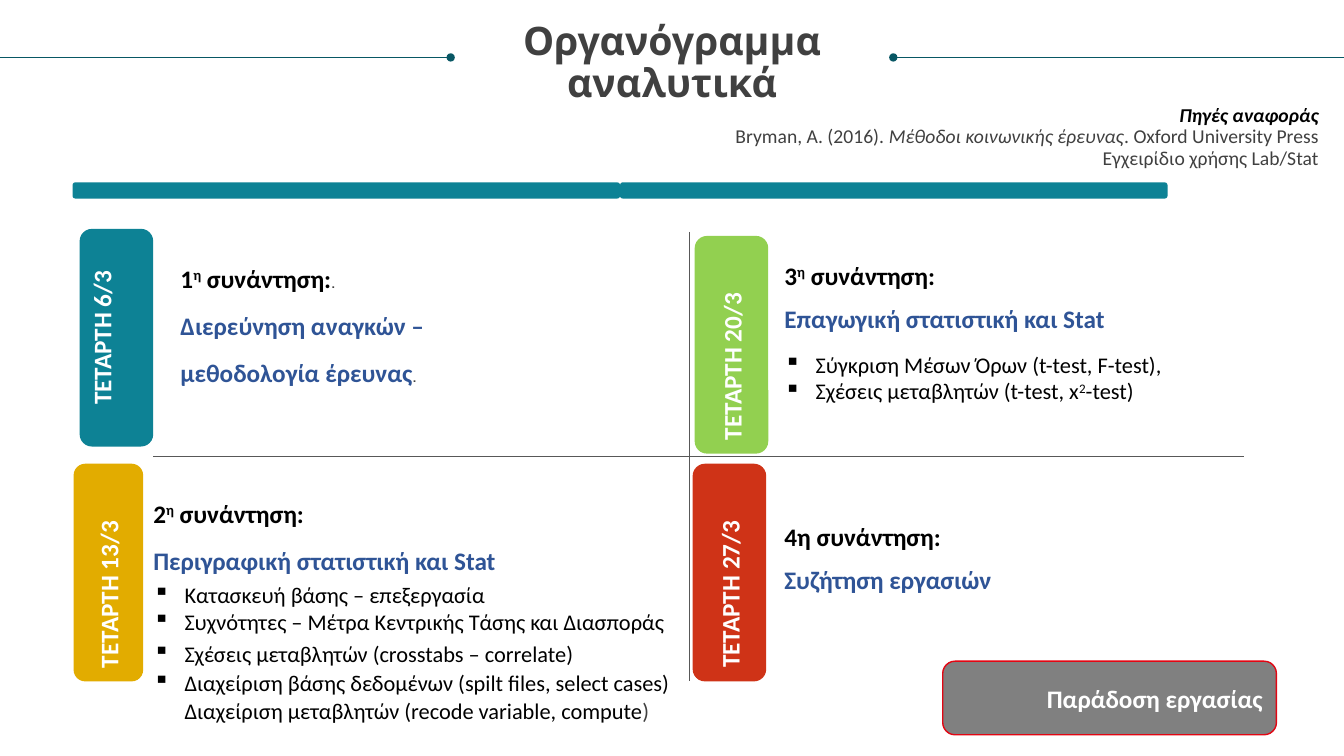
from dataclasses import dataclass

from lxml import etree
from pptx import Presentation
from pptx import util as u
from pptx.dml.color import RGBColor
from pptx.enum import shapes, text
from pptx.oxml.ns import qn


@dataclass(frozen=True)
class Theme:
    teal: str = "0D8295"
    deep_teal: str = "085764"
    amber: str = "E2AC00"
    green: str = "92D050"
    red: str = "CF3317"
    grey: str = "808080"
    outline: str = "E20613"
    rule: str = "585858"
    ink: str = "404040"
    black: str = "000000"
    white: str = "FFFFFF"
    blue: str = "2F5496"
    body: str = "Calibri"
    display: str = "League Spartan"
    accent: str = "Cabin"
    title_size: int = 28
    heading_size: int = 18
    item_size: int = 16
    source_size: int = 14


THEME = Theme()
ALIGN = text.PP_ALIGN
HEADING = dict(size=THEME.heading_size, bold=True)
TOPIC = dict(HEADING, color=THEME.blue)
ITEM = dict(size=THEME.item_size)
DOT = (".", dict(size=THEME.source_size, font=THEME.accent, color=THEME.ink, bold=False))
LOOSE = dict(line=1.07, after=8)


# Text helpers
def add_run(paragraph, content, *, size, font=THEME.body, color=THEME.black,
            bold=False, italic=False, raised=False):
    for index, piece in enumerate(content.split("\n")):
        if index:
            paragraph.add_line_break()
        run = paragraph.add_run()
        run.text = piece
        run.font.size = u.Pt(size)
        run.font.name = font
        run.font.bold = bold
        run.font.italic = italic
        run.font.color.rgb = RGBColor.from_string(color)
        if raised:
            run.font._element.set("baseline", "30000")


def write(frame, content, *, first=False, style, align=ALIGN.LEFT,
          line=None, before=0, after=0, bullet=False):
    """Content is a string, or a list of strings and (string, changes) pairs."""
    paragraph = frame.paragraphs[0] if first else frame.add_paragraph()
    if bullet:
        properties = paragraph._p.get_or_add_pPr()
        properties.set("marL", str(u.Inches(0.31)))
        properties.set("indent", str(-u.Inches(0.31)))
        etree.SubElement(properties, qn("a:buChar")).set("char", "▪")
    paragraph.alignment = align
    paragraph.space_before = u.Pt(0 if first else before)
    paragraph.space_after = u.Pt(after)
    if line:
        paragraph.line_spacing = line
    for part in [content] if isinstance(content, str) else content:
        words, changes = (part, {}) if isinstance(part, str) else part
        add_run(paragraph, words, **{**style, **changes})


def clear_frame(frame):
    frame.word_wrap = True
    frame.auto_size = text.MSO_AUTO_SIZE.NONE
    frame.vertical_anchor = text.MSO_ANCHOR.TOP
    frame.margin_left = frame.margin_top = frame.margin_right = frame.margin_bottom = 0


# Shape helpers
def add_rule(slide, start, end, color, oval_end=False):
    rule = slide.shapes.add_connector(
        shapes.MSO_CONNECTOR.STRAIGHT, *(u.Inches(value) for value in start + end))
    rule.line.color.rgb = RGBColor.from_string(color)
    rule.line.width = u.Pt(0.5)
    if oval_end:
        etree.SubElement(rule.line._get_or_add_ln(), qn("a:tailEnd")).set("type", "oval")
    etree.SubElement(rule._element.spPr, qn("a:effectLst"))


def add_rounded(slide, left, top, width, height, fill, outline=None):
    shape = slide.shapes.add_shape(
        shapes.MSO_SHAPE.ROUNDED_RECTANGLE,
        *(u.Inches(value) for value in (left, top, width, height)))
    shape.shadow.inherit = False
    shape.fill.solid()
    shape.fill.fore_color.rgb = RGBColor.from_string(fill)
    if outline:
        shape.line.color.rgb = RGBColor.from_string(outline)
        shape.line.width = u.Pt(1)
    else:
        shape.line.fill.background()
    shape.text_frame.vertical_anchor = text.MSO_ANCHOR.MIDDLE
    return shape


# Title with the sources below it, between two dotted rules
def build_header(slide, left, top, width, height):
    rule_top = top + 0.36
    add_rule(slide, (13.33, rule_top), (8.86, rule_top), THEME.deep_teal, oval_end=True)
    add_rule(slide, (0, rule_top), (4.47, rule_top), THEME.deep_teal, oval_end=True)

    title = slide.shapes.title
    title.left, title.top = u.Inches(left), u.Inches(top)
    title.width, title.height = u.Inches(width), u.Inches(height)
    frame = title.text_frame
    clear_frame(frame)
    heading = dict(size=THEME.title_size, font=THEME.display, color=THEME.ink, bold=True)
    write(frame, "Οργανόγραμμα", first=True, style=heading, align=ALIGN.CENTER, line=0.9)
    write(frame, "αναλυτικά", style=heading, align=ALIGN.CENTER, line=0.9)

    source = dict(size=THEME.source_size, color=THEME.ink)
    label = ("Πηγές αναφοράς", dict(color=THEME.black, bold=True, italic=True))
    book = ["Bryman, A. (2016). ", ("Μέθοδοι κοινωνικής έρευνας", dict(italic=True)),
            ". Oxford University Press"]
    for content in ([label], book, "Εγχειρίδιο χρήσης Lab/Stat"):
        write(frame, content, style=source, align=ALIGN.RIGHT, line=0.9)


# Band of two equal bars
def build_band(slide, left, top, width, height):
    for index in range(2):
        add_rounded(slide, left + index * width / 2, top, width / 2, height, THEME.teal)


# Upright date tab, given by the box it fills once turned
def build_tab(slide, left, top, width, height, date, fill,
              align=ALIGN.LEFT, bottom_inset=0.05):
    shift = (height - width) / 2
    tab = add_rounded(slide, left - shift, top + shift, height, width, fill)
    tab.rotation = 270
    tab.text_frame.margin_bottom = u.Inches(bottom_inset)
    write(tab.text_frame, date, first=True, align=align,
          style=dict(HEADING, color=THEME.white))


# Meeting text: rows of (content, style, paragraph format)
def build_meeting(slide, left, top, width, height, rows):
    box = slide.shapes.add_textbox(*(u.Inches(value) for value in (left, top, width, height)))
    clear_frame(box.text_frame)
    for index, (content, style, layout) in enumerate(rows):
        write(box.text_frame, content, first=index == 0, style=style, **layout)


def meeting_name(number):
    return [number, ("η", dict(raised=True)), " συνάντηση:"]


# Deadline button
def build_deadline(slide, left, top, width, height):
    button = add_rounded(slide, left, top, width, height, THEME.grey, THEME.outline)
    write(button.text_frame, "Παράδοση εργασίας", first=True, align=ALIGN.RIGHT,
          style=dict(HEADING, color=THEME.white))


def main():
    presentation = Presentation()
    presentation.slide_width, presentation.slide_height = u.Inches(13.33), u.Inches(7.5)
    slide = presentation.slides.add_slide(presentation.slide_layouts.get_by_name("Title Only"))

    build_header(slide, 0.25, 0.21, 12.83, 2.21)
    build_band(slide, 0.72, 1.81, 10.86, 0.16)

    # Cross between the four meetings
    add_rule(slide, (1.52, 4.53), (12.34, 4.53), THEME.rule)
    add_rule(slide, (6.84, 2.3), (6.84, 6.76), THEME.rule)

    # Date tabs
    build_tab(slide, 0.79, 2.27, 0.73, 2.16, "ΤΕΤΑΡΤΗ 6/3", THEME.teal,
              align=ALIGN.CENTER, bottom_inset=0.35)
    build_tab(slide, 0.73, 4.6, 0.69, 2.16, "ΤΕΤΑΡΤΗ 13/3", THEME.amber)
    build_tab(slide, 6.89, 2.34, 0.73, 2.16, "ΤΕΤΑΡΤΗ 20/3", THEME.green)
    build_tab(slide, 6.87, 4.6, 0.73, 2.16, "ΤΕΤΑΡΤΗ 27/3", THEME.red)

    # Meetings
    spaced = dict(before=12)
    item, spaced_item = dict(bullet=True), dict(bullet=True, before=4)
    build_meeting(slide, 1.79, 2.61, 4.79, 1.25, [
        (meeting_name("1") + [DOT], HEADING, spaced),
        ("Διερεύνηση αναγκών –", TOPIC, spaced),
        (["μεθοδολογία έρευνας", DOT], TOPIC, spaced)])
    build_meeting(slide, 1.52, 4.94, 5.15, 2.5, [
        (meeting_name("2"), HEADING, spaced),
        ("Περιγραφική στατιστική και Stat", TOPIC, spaced),
        ("Κατασκευή βάσης – επεξεργασία", ITEM, spaced_item),
        ("Συχνότητες – Μέτρα Κεντρικής Τάσης και Διασποράς", ITEM, item),
        ("Σχέσεις μεταβλητών (crosstabs – correlate)", ITEM, spaced_item),
        (["Διαχείριση βάσης δεδομένων (spilt files, select cases)\n"
          "Διαχείριση μεταβλητών (recode variable, compute", (")", dict(color=THEME.ink))],
         ITEM, dict(LOOSE, bullet=True))])
    build_meeting(slide, 7.78, 2.56, 3.98, 1.47, [
        (meeting_name("3"), HEADING, LOOSE),
        ("Επαγωγική στατιστική και Stat", TOPIC, LOOSE),
        ("Σύγκριση Μέσων Όρων (t-test, F-test),", ITEM, spaced_item),
        (["Σχέσεις μεταβλητών (t-test, x", ("2", dict(raised=True)), "-test)"], ITEM, item)])
    build_meeting(slide, 7.78, 5.15, 4.12, 0.75, [
        ("4η συνάντηση:", HEADING, LOOSE),
        ("Συζήτηση εργασιών", TOPIC, LOOSE)])

    build_deadline(slide, 9.35, 6.56, 3.31, 0.73)
    presentation.save("out.pptx")


if __name__ == "__main__":
    main()
